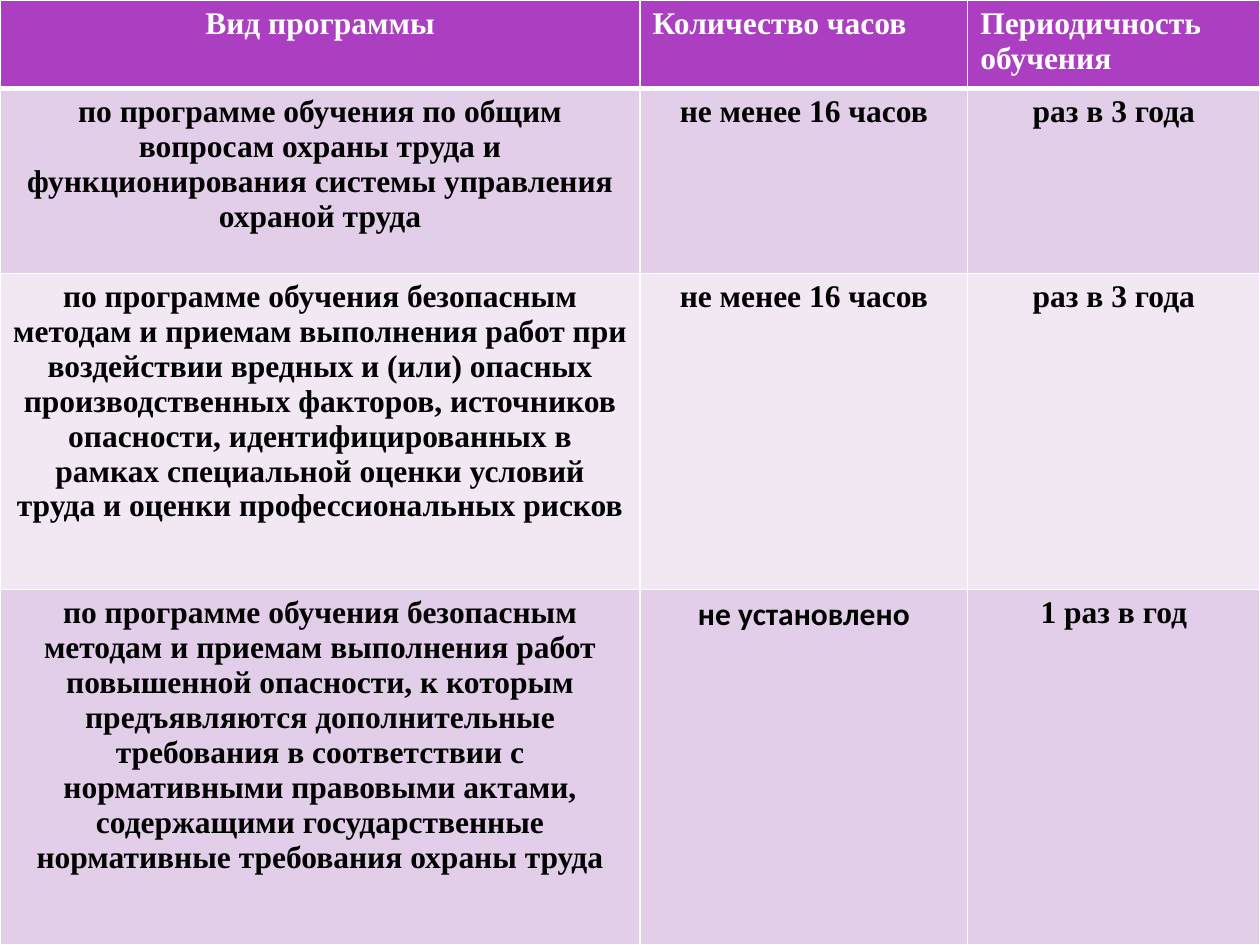
from lxml.etree import SubElement
from pptx import Presentation
from pptx.dml.color import RGBColor
from pptx.enum.text import PP_ALIGN as Align
from pptx.oxml.ns import qn
from pptx.util import Pt

SERIF, SANS = "Times New Roman", "Calibri"
WHITE, BLACK = "FFFFFF", "000000"
HEADER_FILL = "AC3EC1"
BAND_FILLS = ["E3CEE9", "F1E8F4"]
COLUMN_WIDTHS = [365.8, 187.2, 167]
ROW_HEIGHTS = [50.4, 105.8, 180.7, 203.1]
HEADINGS = ["Вид программы", "Количество часов", "Периодичность обучения"]
PROGRAMS = [
    ["по программе обучения по общим вопросам охраны труда и "
     "функционирования системы управления охраной труда",
     "не менее 16 часов", "раз в 3 года"],
    ["по программе обучения безопасным методам и приемам выполнения работ "
     "при воздействии вредных и (или) опасных производственных факторов, "
     "источников опасности, идентифицированных в рамках специальной оценки "
     "условий труда и оценки профессиональных рисков",
     "не менее 16 часов", "раз в 3 года"],
    ["по программе обучения безопасным методам и приемам выполнения работ "
     "повышенной опасности, к которым предъявляются дополнительные "
     "требования в соответствии с нормативными правовыми актами, "
     "содержащими государственные нормативные требования охраны труда",
     "не установлено", "1 раз в год"],
]


def color(value):
    return RGBColor.from_string(value)


def set_borders(cell, top, bottom):
    properties = cell._tc.get_or_add_tcPr()
    widths = {"a:lnL": 1, "a:lnR": 1, "a:lnT": top, "a:lnB": bottom}
    for position, (side, width) in enumerate(widths.items()):
        border = SubElement(properties, qn(side), w=str(Pt(width)))
        fill = SubElement(border, qn("a:solidFill"))
        SubElement(fill, qn("a:srgbClr"), val=WHITE)
        properties.insert(position, border)


def fill_cell(cell, text, fill, text_color, align, font_name):
    cell.fill.solid()
    cell.fill.fore_color.rgb = color(fill)
    paragraph = cell.text_frame.paragraphs[0]
    paragraph.alignment = align
    run = paragraph.add_run()
    run.text = text
    run.font.name = font_name
    run.font.size = Pt(18)
    run.font.bold = True
    run.font.color.rgb = color(text_color)


def add_program_table(slide):
    rows = [HEADINGS] + PROGRAMS
    table = slide.shapes.add_table(
        len(rows), len(HEADINGS), Pt(0), Pt(0), Pt(720), Pt(540)).table
    for column, width in zip(table.columns, COLUMN_WIDTHS):
        column.width = Pt(width)
    for row, height in zip(table.rows, ROW_HEIGHTS):
        row.height = Pt(height)
    for r, texts in enumerate(rows):
        is_header = r == 0
        fill = HEADER_FILL if is_header else BAND_FILLS[(r - 1) % 2]
        for c, text in enumerate(texts):
            cell = table.cell(r, c)
            align = Align.LEFT if is_header and c else Align.CENTER
            font_name = SANS if text == "не установлено" else SERIF
            fill_cell(cell, text, fill, WHITE if is_header else BLACK,
                      align, font_name)
            set_borders(cell, top=3 if r == 1 else 1,
                        bottom=3 if is_header else 1)


def main():
    deck = Presentation()
    deck.slide_width, deck.slide_height = Pt(720), Pt(540)
    slide = deck.slides.add_slide(deck.slide_layouts[6])
    slide.background.fill.solid()
    slide.background.fill.fore_color.rgb = color(BLACK)
    add_program_table(slide)
    deck.save("out.pptx")


if __name__ == "__main__":
    main()
